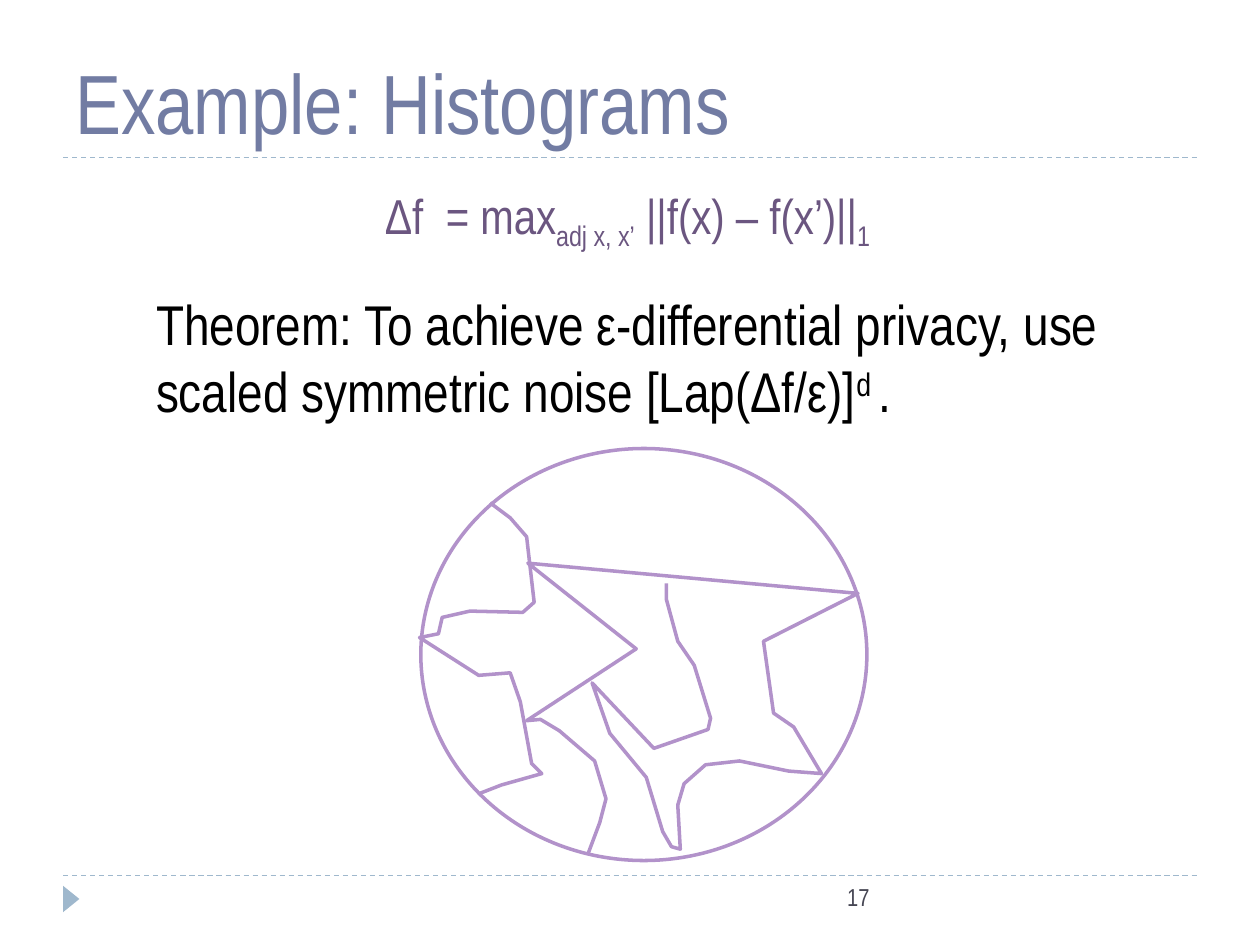
from lxml import etree
from pptx import Presentation
from pptx.dml.color import RGBColor
from pptx.enum.dml import MSO_LINE
from pptx.enum.shapes import MSO_CONNECTOR, MSO_SHAPE
from pptx.enum.text import MSO_ANCHOR, PP_ALIGN
from pptx.oxml.ns import qn
from pptx.util import Pt

DASH = MSO_LINE.DASH
STRAIGHT = MSO_CONNECTOR.STRAIGHT
ELLIPSE, TRIANGLE = MSO_SHAPE.OVAL, MSO_SHAPE.ISOSCELES_TRIANGLE
TOP, BOTTOM = MSO_ANCHOR.TOP, MSO_ANCHOR.BOTTOM
LEFT, CENTER, RIGHT = PP_ALIGN.LEFT, PP_ALIGN.CENTER, PP_ALIGN.RIGHT

EMU_PER_PX = 9144  # 100 px to the inch
FONT = "Arial Narrow"
RULE_BLUE, REGION_PURPLE = "9FB8CD", "B292CA"
SUB, SUPER = -25, 30


def px(length):
    return length * EMU_PER_PX


def color(hex_string):
    return RGBColor.from_string(hex_string)


class SlideWriter:
    def __init__(self, slide):
        self.shapes = slide.shapes

    def rule(self, y):
        line = self.shapes.add_connector(STRAIGHT, px(50), px(y), px(950), px(y))
        line.line.color.rgb = color(RULE_BLUE)
        line.line.width = Pt(0.75)
        line.line.dash_style = DASH
        etree.SubElement(line._element.spPr, qn("a:effectLst"))

    def text(self, box, paragraphs, size, ink, align=LEFT, anchor=TOP, wrap=True):
        """Each paragraph is a list of (text, baseline percent) runs."""
        frame = self.shapes.add_textbox(*map(px, box)).text_frame
        frame.word_wrap = wrap
        frame.vertical_anchor = anchor
        for index, runs in enumerate(paragraphs):
            paragraph = frame.add_paragraph() if index else frame.paragraphs[0]
            paragraph.alignment = align
            paragraph.font.name = FONT
            paragraph.font.size = Pt(size)
            paragraph.font.color.rgb = color(ink)
            for words, baseline in runs:
                run = paragraph.add_run()
                run.text = words
                if baseline:
                    run._r.get_or_add_rPr().set("baseline", str(baseline * 1000))

    def outline(self, shape):
        shape.shadow.inherit = False
        shape.fill.background()
        shape.line.color.rgb = color(REGION_PURPLE)
        shape.line.width = Pt(2)

    def ellipse(self, box):
        self.outline(self.shapes.add_shape(ELLIPSE, *map(px, box)))

    def border(self, points):
        builder = self.shapes.build_freeform(*points[0], scale=EMU_PER_PX)
        builder.add_line_segments(points[1:], close=False)
        self.outline(builder.convert_to_shape())

    def marker(self, box):
        triangle = self.shapes.add_shape(TRIANGLE, *map(px, box))
        triangle.rotation = 90
        triangle.shadow.inherit = False
        triangle.fill.solid()
        triangle.fill.fore_color.rgb = color(RULE_BLUE)
        triangle.line.fill.background()


WEST_BORDER = [
    (389, 399), (405, 411), (418, 426), (424, 478), (415, 486), (373, 485),
    (351, 490), (348, 503), (333, 506), (380, 536), (405, 534), (413, 557),
    (422, 606), (430, 614), (398, 623), (380, 630),
]
INNER_BORDER = [
    (467, 677), (476, 653), (481, 634), (472, 604), (444, 580), (429, 571),
    (418, 572), (505, 515), (419, 447), (681, 471), (606, 509), (614, 566),
    (630, 577), (652, 614), (626, 612), (587, 604), (560, 607), (543, 622),
    (538, 639), (540, 674), (533, 672), (526, 660), (513, 617), (484, 582),
    (470, 542), (519, 594), (562, 579), (564, 570), (551, 528), (538, 509),
    (529, 476), (529, 463),
]


def main():
    deck = Presentation()
    deck.slide_width, deck.slide_height = px(1000), px(750)
    writer = SlideWriter(deck.slides.add_slide(deck.slide_layouts[6]))

    # Frame: rules, corner marker and page number
    for y in (695, 125):
        writer.rule(y)
    writer.marker((46, 707, 21, 13))
    writer.text((317, 695, 383, 40), [[("17", 0)]], 14, "464653", align=RIGHT)

    # Title
    writer.text((50, 17, 900, 108), [[("Example: Histograms", 0)]], 48, "727CA3",
                anchor=BOTTOM)

    # Sensitivity formula
    sensitivity = [("Δf  = max", 0), ("adj x, x’", SUB),
                   (" ||f(x) – f(x’)||", 0), ("1", SUB)]
    writer.text((287, 142, 422, 57), [sensitivity], 28, "6B5680",
                align=CENTER, wrap=False)

    # Theorem
    theorem = [
        [("Theorem: To achieve ε-differential privacy, use", 0)],
        [("scaled symmetric noise [Lap(Δf/ε)]", 0), ("d ", SUPER), (".", 0)],
    ]
    writer.text((114, 225, 796, 118), theorem, 32, "000000", wrap=False)

    # Domain split into histogram cells
    writer.ellipse((334, 356, 354, 327))
    for points in (WEST_BORDER, INNER_BORDER):
        writer.border(points)

    deck.save("out.pptx")


if __name__ == "__main__":
    main()
